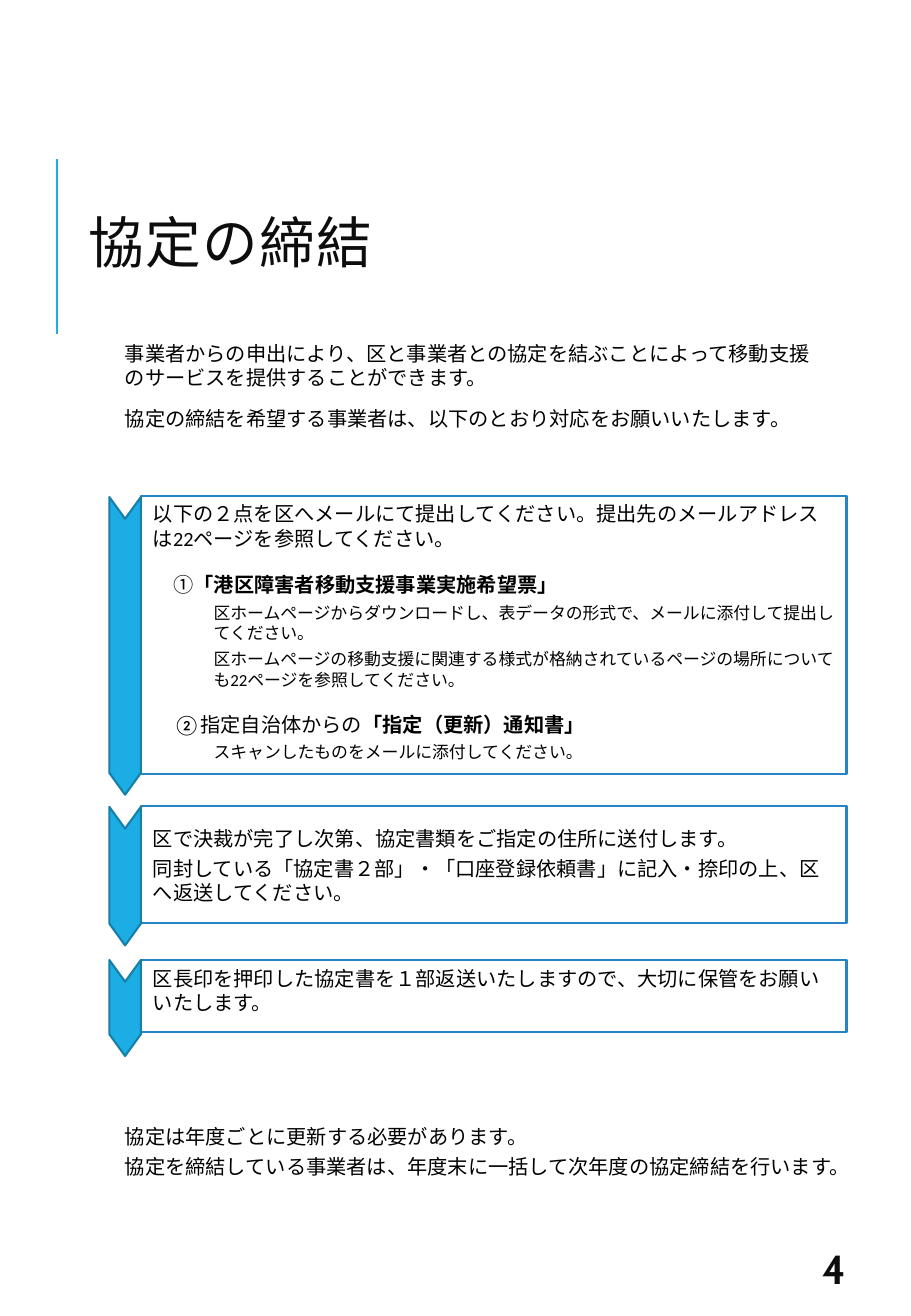
from dataclasses import dataclass

from lxml.etree import SubElement
from pptx import Presentation
from pptx.dml.color import RGBColor
from pptx.enum.shapes import MSO_CONNECTOR, MSO_SHAPE
from pptx.enum.text import MSO_ANCHOR, PP_ALIGN
from pptx.oxml.ns import qn
from pptx.shapes.autoshape import Shape
from pptx.slide import Slide
from pptx.util import Inches, Pt

BLACK = RGBColor(0x00, 0x00, 0x00)
INK = RGBColor(0x0D, 0x0D, 0x0D)
WHITE = RGBColor(0xFF, 0xFF, 0xFF)
SKY = RGBColor(0x1C, 0xAD, 0xE4)
TEAL = RGBColor(0x15, 0x80, 0xA9)
BLUE = RGBColor(0x26, 0x83, 0xC6)

BOX_LEFT, BOX_WIDTH = 1.16, 5.81
ARROW_MID, ARROW_WIDTH = 1.03, 0.26


@dataclass
class Para:
    text: str
    strong: str = ""  # bold part that follows the text
    size: float = 12
    indent: float = 0
    before: float = 3.4
    after: float = 0
    spacing: float = 1.0
    font: str = "Calibri"
    color: RGBColor = BLACK
    bold: bool = False
    track: int = 0


@dataclass
class Step:
    top: float
    height: float
    arrow_top: float
    arrow_height: float
    paras: list[Para]
    inset: float = 0.05


def heading(text: str, strong: str) -> Para:
    return Para(text, strong, indent=0.17, before=6, spacing=1.5)


def detail(text: str) -> Para:
    return Para(text, size=10, indent=0.5)


def write(shape: Shape, paras: list[Para], anchor: MSO_ANCHOR = MSO_ANCHOR.TOP) -> None:
    frame = shape.text_frame
    frame.word_wrap = True
    frame.vertical_anchor = anchor
    for i, para in enumerate(paras):
        line = frame.add_paragraph() if i else frame.paragraphs[0]
        line.text = para.text
        line.alignment = PP_ALIGN.LEFT
        line.line_spacing = para.spacing
        line.space_before, line.space_after = Pt(para.before), Pt(para.after)
        props = line._p.get_or_add_pPr()
        props.set("marL", str(Inches(para.indent)))
        props.set("indent", "0")
        if para.strong:
            line.add_run().text = para.strong
        for run in line.runs:
            font = run.font
            font.size, font.name = Pt(para.size), para.font
            font.bold = para.bold or run.text == para.strong
            font.color.rgb = para.color
            style = run._r.get_or_add_rPr()
            style.set("spc", str(para.track))
            SubElement(style, qn("a:ea")).set("typeface", para.font)


def add_text(slide: Slide, left: float, top: float, width: float, height: float,
             paras: list[Para], anchor: MSO_ANCHOR = MSO_ANCHOR.TOP) -> None:
    box = slide.shapes.add_textbox(Inches(left), Inches(top), Inches(width), Inches(height))
    write(box, paras, anchor)


def add_shape(slide: Slide, kind: MSO_SHAPE, left: float, top: float, width: float,
              height: float, fill: RGBColor, edge: RGBColor) -> Shape:
    shape = slide.shapes.add_shape(
        kind, Inches(left), Inches(top), Inches(width), Inches(height))
    shape.shadow.inherit = False
    shape.fill.solid()
    shape.fill.fore_color.rgb = fill
    shape.line.color.rgb = edge
    shape.line.width = Pt(1.25)
    return shape


def add_step(slide: Slide, step: Step) -> None:
    box = add_shape(slide, MSO_SHAPE.RECTANGLE, BOX_LEFT, step.top, BOX_WIDTH,
                    step.height, WHITE, BLUE)
    write(box, step.paras)
    box.text_frame.margin_top = Inches(step.inset)
    # The arrow is placed about its centre, then turned to point down
    left = ARROW_MID - step.arrow_height / 2
    top = step.arrow_top + (step.arrow_height - ARROW_WIDTH) / 2
    arrow = add_shape(slide, MSO_SHAPE.CHEVRON, left, top, step.arrow_height,
                      ARROW_WIDTH, SKY, TEAL)
    arrow.adjustments[0] = 0.69
    arrow.rotation = 90


STEPS = [
    Step(4.08, 2.29, 4.09, 2.45, [
        Para("以下の２点を区へメールにて提出してください。提出先のメールアドレスは22ページを参照してください。"),
        heading("➀", "「港区障害者移動支援事業実施希望票」"),
        detail("区ホームページからダウンロードし、表データの形式で、メールに添付して提出してください。"),
        detail("区ホームページの移動支援に関連する様式が格納されているページの場所についても22ページを参照してください。"),
        heading("②指定自治体からの", "「指定（更新）通知書」"),
        detail("スキャンしたものをメールに添付してください。"),
    ]),
    Step(6.63, 0.97, 6.64, 1.14, [
        Para("区で決裁が完了し次第、協定書類をご指定の住所に送付します。", before=0),
        Para("同封している「協定書２部」・「口座登録依頼書」に記入・捺印の上、区へ返送してください。"),
    ], inset=0.17),
    Step(7.9, 0.59, 7.9, 0.79, [
        Para("区長印を押印した協定書を１部返送いたしますので、大切に保管をお願いいたします。"),
    ]),
]


def main() -> None:
    deck = Presentation()
    deck.slide_width, deck.slide_height = Inches(7.5), Inches(10.83)
    slide = deck.slides.add_slide(deck.slide_layouts[6])

    # Title with its side rule
    rule = slide.shapes.add_connector(
        MSO_CONNECTOR.STRAIGHT, Inches(0.47), Inches(2.75), Inches(0.47), Inches(1.31))
    rule.line.color.rgb = SKY
    rule.line.width = Pt(1.5)
    SubElement(rule._element.spPr, qn("a:effectLst"))
    add_text(slide, 0.63, 1.32, 5.98, 1.44,
             [Para("協定の締結", size=33, before=0, spacing=0.8, font="Cabin",
                   color=INK, track=80)], MSO_ANCHOR.MIDDLE)

    # Introduction
    add_text(slide, 0.93, 2.76, 5.98, 0.89, [
        Para("事業者からの申出により、区と事業者との協定を結ぶことによって移動支援のサービスを提供することができます。", after=6),
        Para("協定の締結を希望する事業者は、以下のとおり対応をお願いいたします。", after=6),
    ])

    # Steps
    for step in STEPS:
        add_step(slide, step)

    # Renewal note
    add_text(slide, 0.93, 9.2, 6.04, 0.66, [
        Para("協定は年度ごとに更新する必要があります。"),
        Para("協定を締結している事業者は、年度末に一括して次年度の協定締結を行います。"),
    ])

    # Page number
    add_text(slide, 6.67, 10.22, 0.6, 0.43,
             [Para("4", size=24, before=0, font="Cabin", color=INK, bold=True)],
             MSO_ANCHOR.MIDDLE)

    deck.save("out.pptx")


if __name__ == "__main__":
    main()
